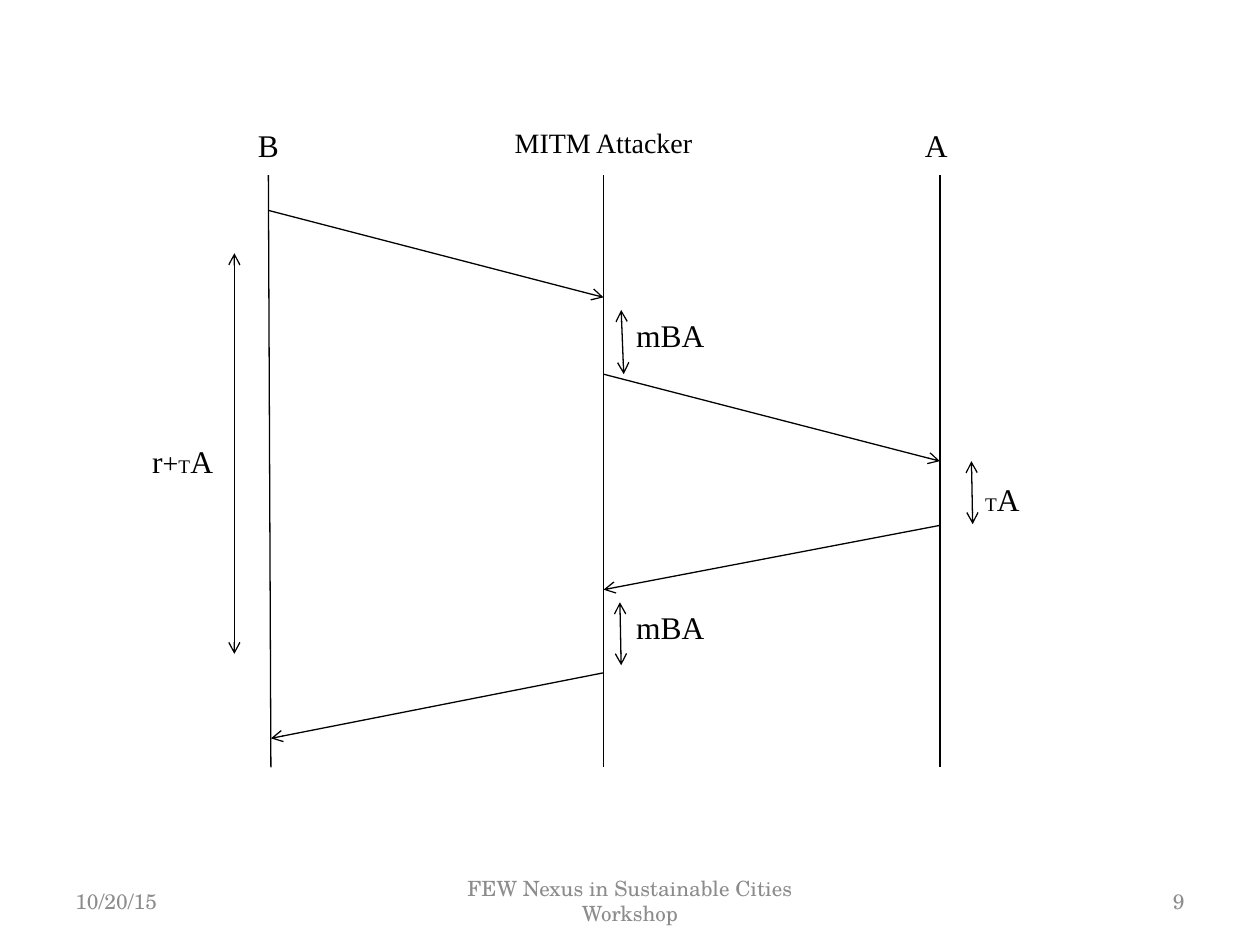
from dataclasses import dataclass

from lxml import etree
from pptx import Presentation
from pptx.dml.color import RGBColor
from pptx.enum.shapes import MSO_CONNECTOR
from pptx.enum.text import MSO_ANCHOR, MSO_AUTO_SIZE, PP_ALIGN
from pptx.oxml.ns import qn
from pptx.util import Inches, Pt

STRAIGHT = MSO_CONNECTOR.STRAIGHT
LEFT, CENTER, RIGHT = PP_ALIGN.LEFT, PP_ALIGN.CENTER, PP_ALIGN.RIGHT
TOP, MIDDLE = MSO_ANCHOR.TOP, MSO_ANCHOR.MIDDLE
GROW, FIXED = MSO_AUTO_SIZE.SHAPE_TO_FIT_TEXT, MSO_AUTO_SIZE.NONE


@dataclass(frozen=True)
class Theme:
    ink: RGBColor = RGBColor(0x00, 0x00, 0x00)
    muted: RGBColor = RGBColor(0x8C, 0x8C, 0x8C)
    body_font: str = "Times New Roman"
    footer_font: str = "TeX Gyre Schola"
    large: float = 18
    medium: float = 16
    small: float = 11
    footer: float = 12
    line: float = 0.75


THEME = Theme()


def add_text(s, box, runs, align=LEFT, anchor=TOP, size_mode=GROW, wrap=True,
             font=THEME.body_font, color=THEME.ink):
    """Add a one-paragraph text box; runs is a list of (text, size)."""
    tf = s.shapes.add_textbox(*map(Inches, box)).text_frame
    frame_format = {"word_wrap": wrap, "auto_size": size_mode,
                    "vertical_anchor": anchor}
    for name, value in frame_format.items():
        setattr(tf, name, value)
    p = tf.paragraphs[0]
    p.alignment = align
    for text, size in runs:
        r = p.add_run()
        r.text = text
        for name, value in {"name": font, "size": Pt(size)}.items():
            setattr(r.font, name, value)
        r.font.color.rgb = color


def add_line(s, start, end, ends=()):
    """Add a straight line; ends lists headEnd (start) and tailEnd (end)."""
    line = s.shapes.add_connector(STRAIGHT, *map(Inches, (*start, *end)))
    line.line.color.rgb = THEME.ink
    line.line.width = Pt(THEME.line)
    ln = line.line._ln
    for tag in ends:
        etree.SubElement(ln, qn(f"a:{tag}"), type="arrow")
    etree.SubElement(line._element.spPr, qn("a:effectLst"))


def add_sequence(s, left, top):
    """Draw the message exchange between B, the attacker and A."""
    def at(x, y):
        return left + x, top + y

    b, b_foot, attacker, a = 1.02, 1.04, 3.68, 6.35
    life_top, life_bottom = 0.44, 5.14

    # Lifelines
    for head, foot in ((b, b_foot), (attacker, attacker), (a, a)):
        add_line(s, at(head, life_top), at(foot, life_bottom))

    # Participants
    for text, x, w, h, size in (
            ("B", 0.77, 0.5, 0.4, THEME.large),
            ("MITM Attacker", 2.59, 2.18, 0.37, THEME.medium),
            ("A", 5.9, 0.84, 0.4, THEME.large)):
        add_text(s, (*at(x, 0), w, h), [(text, size)], align=CENTER)

    # Messages
    for x1, y1, x2, y2 in ((b, 0.72, attacker, 1.41),
                           (attacker, 2.02, a, 2.71),
                           (a, 3.22, attacker, 3.73),
                           (attacker, 4.39, b_foot, 4.91)):
        add_line(s, at(x1, y1), at(x2, y2), ["tailEnd"])

    # Time spans
    for x1, y1, x2, y2 in ((0.75, 1.06, 0.75, 4.24),
                           (3.82, 1.51, 3.84, 2.02),
                           (3.81, 3.83, 3.82, 4.33),
                           (6.6, 2.71, 6.61, 3.21)):
        add_line(s, at(x1, y1), at(x2, y2), ["headEnd", "tailEnd"])

    # Time span labels
    delay = [("mBA", THEME.large)]
    tau_a = [("T", THEME.small), ("A", THEME.large)]
    round_trip = [("r", THEME.large), ("+", THEME.medium), *tau_a]
    for x, y, w, runs in ((0, 2.51, 0.68, round_trip),
                          (3.84, 1.51, 0.79, delay),
                          (3.84, 3.83, 0.79, delay),
                          (6.61, 2.81, 0.61, tau_a)):
        add_text(s, (*at(x, y), w, 0.4), runs, wrap=False)


def add_footer(s, left, top, width, height):
    """Place date, event and slide number along the bottom."""
    side, middle = 2.33, 3.17
    for text, x, w, align in (
            ("10/20/15", 0, side, LEFT),
            ("FEW Nexus in Sustainable Cities Workshop",
             (width - middle) / 2, middle, CENTER),
            ("9", width - side, side, RIGHT)):
        add_text(s, (left + x, top, w, height), [(text, THEME.footer)],
                 align=align, anchor=MIDDLE, size_mode=FIXED,
                 font=THEME.footer_font, color=THEME.muted)


def main():
    prs = Presentation()
    prs.slide_width, prs.slide_height = Inches(10), Inches(7.5)
    s = prs.slides.add_slide(prs.slide_layouts[6])
    add_sequence(s, 1.11, 0.95)
    add_footer(s, 0.5, 6.95, 9, 0.4)
    prs.save("out.pptx")


if __name__ == "__main__":
    main()
